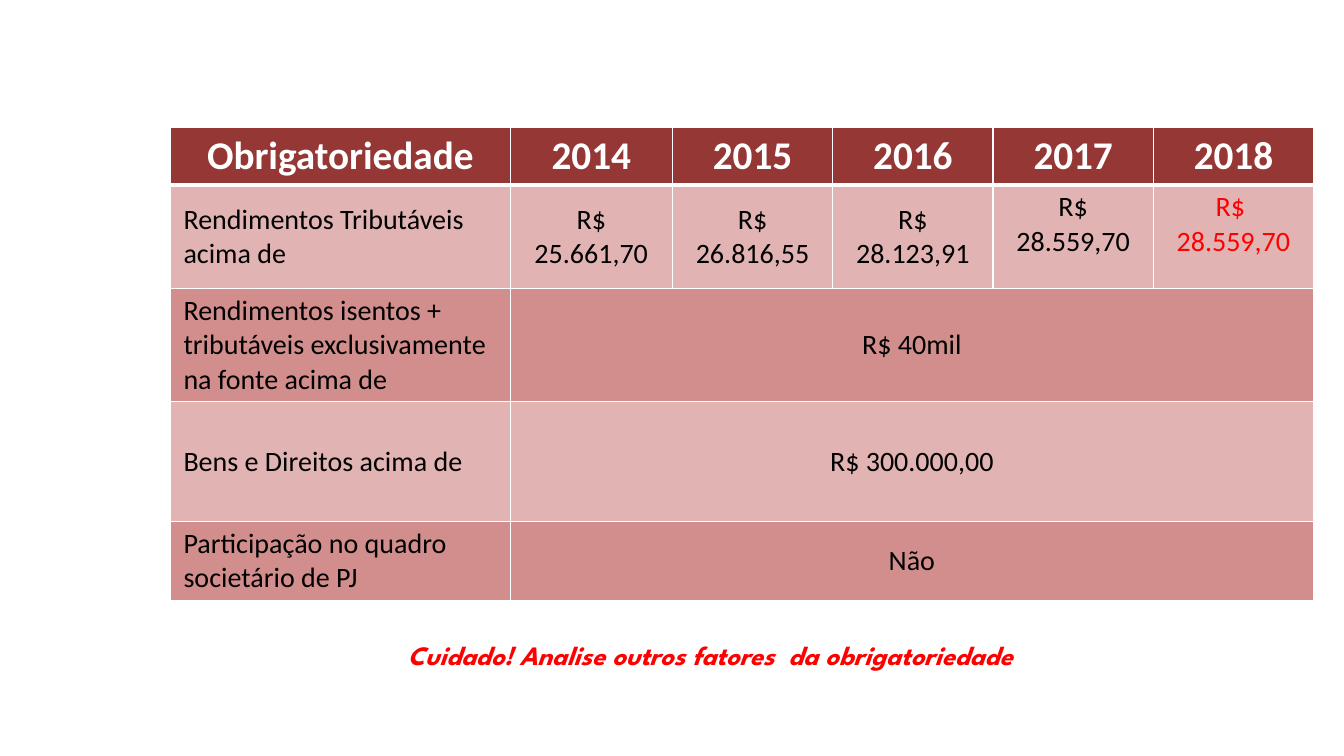
import pptx
import pptx.dml.color
import pptx.enum.text
import pptx.oxml
import pptx.oxml.ns
import pptx.util

PX = 9144  # one hundredth of an inch
ALIGN = pptx.enum.text.PP_ALIGN
ANCHOR = pptx.enum.text.MSO_ANCHOR
COLORS = {
    "white": "FFFFFF",
    "black": "000000",
    "red": "FF0000",
    "header": "953735",
    "light": "E1B4B3",
    "dark": "D28E8C",
}
COLUMNS = [337, 161, 159, 159, 159, 159]
ROWS = [51, 103, 103, 119, 75]
CONTENT = [
    ["Obrigatoriedade", "2014", "2015", "2016", "2017", "2018"],
    ["Rendimentos Tributáveis acima de", "R$ 25.661,70", "R$\n26.816,55",
     "R$\n28.123,91", "R$ 28.559,70", "R$ \n28.559,70"],
    ["Rendimentos isentos + tributáveis exclusivamente na fonte acima de", "R$ 40mil"],
    ["Bens e Direitos acima de", "R$ 300.000,00"],
    ["Participação no quadro societário de PJ", "Não"],
]


def px(length):
    return pptx.util.Emu(length * PX)


def rgb(name):
    return pptx.dml.color.RGBColor.from_string(COLORS[name])


class Slide:
    def __init__(self, deck):
        self.page = deck.slides.add_slide(deck.slide_layouts[6])

    def style(self, frame, size, color, align, bold=False, italic=False, font="Calibri"):
        for para in frame.paragraphs:
            para.alignment = align
            for span in para.runs:
                span.font.name = font
                span.font.size = pptx.util.Pt(size)
                span.font.bold = bold
                span.font.italic = italic
                span.font.color.rgb = rgb(color)

    def text(self, left, top, width, height, text, **style):
        box = self.page.shapes.add_textbox(px(left), px(top), px(width), px(height))
        box.text_frame.word_wrap = True
        box.text_frame.text = text
        self.style(box.text_frame, **style)

    def borders(self, cell, **points):
        properties = cell._tc.get_or_add_tcPr()
        for side in "LRTB":
            width = pptx.util.Pt(points.get(side, 1))
            properties.append(pptx.oxml.parse_xml(
                f'<a:ln{side} {pptx.oxml.ns.nsdecls("a")} w="{width}"><a:solidFill>'
                f'<a:srgbClr val="{COLORS["white"]}"/></a:solidFill></a:ln{side}>'))

    def table(self, left, top, columns, rows, content):
        """Add the table; a row with two entries spans the second over the rest."""
        table = self.page.shapes.add_table(
            len(rows), len(columns), px(left), px(top), px(sum(columns)), px(sum(rows))).table
        for column, width in zip(table.columns, columns):
            column.width = px(width)
        for row, height in zip(table.rows, rows):
            row.height = px(height)
        for r, entries in enumerate(content):
            if len(entries) == 2:
                table.cell(r, 1).merge(table.cell(r, len(columns) - 1))
            fill = "header" if r == 0 else ("light" if r % 2 else "dark")
            for c in range(len(columns)):
                cell = table.cell(r, c)
                self.borders(cell, T=3 if r == 1 else 1, B=3 if r == 0 else 1)
                cell.fill.solid()
                cell.fill.fore_color.rgb = rgb(fill)
                cell.margin_left = cell.margin_right = px(13)
                cell.margin_top = cell.margin_bottom = px(5)
                cell.vertical_anchor = ANCHOR.TOP if r == 1 and c > 3 else ANCHOR.MIDDLE
                if c < len(entries):
                    cell.text_frame.text = entries[c]
                    align = ALIGN.LEFT if r and c == 0 else ALIGN.CENTER
                    if r == 0:
                        self.style(cell.text_frame, 28, "white", align, bold=True)
                    else:
                        color = "red" if (r, c) == (1, 5) else "black"
                        self.style(cell.text_frame, 20, color, align)


def main():
    deck = pptx.Presentation()
    deck.slide_width, deck.slide_height = px(1333), px(750)
    slide = Slide(deck)
    slide.table(169, 126, COLUMNS, ROWS, CONTENT)
    slide.text(232, 629, 952, 42, "Cuidado! Analise outros fatores  da obrigatoriedade ",
               size=19, color="red", align=ALIGN.CENTER, bold=True, italic=True,
               font="League Spartan")
    deck.save("out.pptx")


if __name__ == "__main__":
    main()
